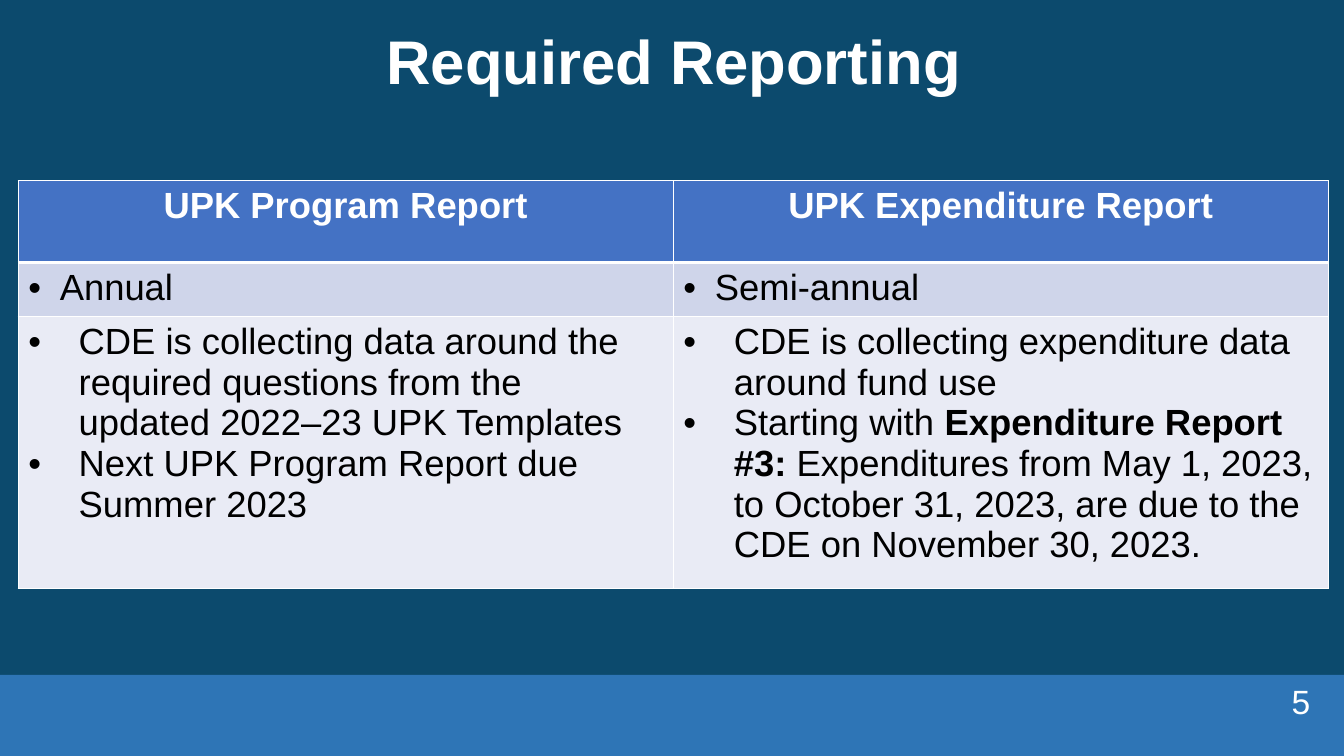
from dataclasses import dataclass

from lxml.etree import SubElement
from pptx import Presentation
from pptx.dml.color import RGBColor as RGB
from pptx.enum.shapes import MSO_SHAPE as Shape
from pptx.enum.text import MSO_ANCHOR as Anchor, PP_ALIGN as Align
from pptx.oxml.ns import qn
from pptx.util import Pt


@dataclass(frozen=True)
class Theme:
    font: str = "Arial"
    background: str = "0C4A6D"
    band: str = "2E75B6"
    light: str = "FFFFFF"
    dark: str = "000000"
    row_fills: tuple = ("4472C4", "CFD5EA", "E9EBF5")
    title_size: int = 44
    table_size: int = 26
    number_size: int = 24


THEME = Theme()
COLUMN_WIDTH = 468
ROW_HEIGHTS = (58.6, 36.2, 181.6)
ROW_INDENTS = (0, 22.5, 36)

# Each cell lists its paragraphs; each paragraph lists (text, bold) runs
REPORTS = (
    (
        [[("UPK Program Report", True)]],
        [[("UPK Expenditure Report", True)]],
    ),
    (
        [[("Annual", False)]],
        [[("Semi-annual", False)]],
    ),
    (
        [
            [("CDE is collecting data around the required questions from the "
              "updated 2022–23 UPK Templates", False)],
            [("Next UPK Program Report due Summer 2023", False)],
        ],
        [
            [("CDE is collecting expenditure data around fund use", False)],
            [("Starting with ", False),
             ("Expenditure Report #3:", True),
             (" Expenditures from May 1, 2023, to October 31, 2023, are due "
              "to the CDE on November 30, 2023.", False)],
        ],
    ),
)


def style_run(run, size, color, bold=False):
    run.font.name = THEME.font
    run.font.size = Pt(size)
    run.font.bold = bold
    run.font.color.rgb = RGB.from_string(color)


def add_band(slide, left, top, width, height):
    band = slide.shapes.add_shape(
        Shape.RECTANGLE, Pt(left), Pt(top), Pt(width), Pt(height))
    band.shadow.inherit = False
    band.fill.solid()
    band.fill.fore_color.rgb = RGB.from_string(THEME.band)
    band.line.fill.background()


def add_label(slide, text, box, size, align, anchor, bold=False, spacing=1.0):
    frame = slide.shapes.add_textbox(*map(Pt, box)).text_frame
    frame.word_wrap = True
    frame.vertical_anchor = anchor
    frame.margin_left = frame.margin_right = 0
    frame.margin_top = frame.margin_bottom = 0
    frame.text = text
    line = frame.paragraphs[0]
    line.alignment = align
    line.line_spacing = spacing
    style_run(line.runs[0], size, THEME.light, bold)


def add_bullet(paragraph, indent):
    properties = paragraph._p.get_or_add_pPr()
    properties.set("marL", str(Pt(indent)))
    properties.set("indent", str(-Pt(indent)))
    SubElement(properties, qn("a:buFont"), typeface=THEME.font)
    SubElement(properties, qn("a:buChar"), char="•")


def set_borders(cell, widths):
    properties = cell._tc.get_or_add_tcPr()
    for side, width in widths.items():
        border = SubElement(properties, qn(f"a:ln{side}"), w=str(Pt(width)))
        fill = SubElement(border, qn("a:solidFill"))
        SubElement(fill, qn("a:srgbClr"), val=THEME.light)


def fill_cell(cell, paragraphs, row):
    is_header = row == 0
    # Borders precede the fill in the cell properties
    set_borders(cell, {"L": 1, "R": 1,
                       "T": 3 if row == 1 else 1,
                       "B": 3 if is_header else 1})
    cell.fill.solid()
    cell.fill.fore_color.rgb = RGB.from_string(THEME.row_fills[row])

    frame = cell.text_frame
    frame.text = "\n".join(
        "".join(text for text, _ in runs) for runs in paragraphs)
    for paragraph, runs in zip(frame.paragraphs, paragraphs):
        paragraph.text = ""
        for text, bold in runs:
            run = paragraph.add_run()
            run.text = text
            style_run(run, THEME.table_size,
                      THEME.light if is_header else THEME.dark, bold)
        if is_header:
            paragraph.alignment = Align.CENTER
        else:
            add_bullet(paragraph, ROW_INDENTS[row])


def add_report_table(slide, left, top):
    columns = len(REPORTS[0])
    table = slide.shapes.add_table(
        len(REPORTS), columns, Pt(left), Pt(top),
        Pt(COLUMN_WIDTH * columns), Pt(sum(ROW_HEIGHTS))).table
    for column in table.columns:
        column.width = Pt(COLUMN_WIDTH)
    for row, (height, cells) in enumerate(zip(ROW_HEIGHTS, REPORTS)):
        table.rows[row].height = Pt(height)
        for column, paragraphs in enumerate(cells):
            fill_cell(table.cell(row, column), paragraphs, row)


def main():
    deck = Presentation()
    deck.slide_width, deck.slide_height = Pt(960), Pt(540)
    slide = deck.slides.add_slide(deck.slide_layouts[6])

    # Background and footer band
    slide.background.fill.solid()
    slide.background.fill.fore_color.rgb = RGB.from_string(THEME.background)
    add_band(slide, 0, 482, 960, 58)

    # Title
    add_label(slide, "Required Reporting", (13.5, -6.5, 936, 104.5),
              THEME.title_size, Align.CENTER, Anchor.MIDDLE,
              bold=True, spacing=0.9)

    # Report comparison
    add_report_table(slide, 13, 129)

    # Slide number
    add_label(slide, "5", (864.5, 494, 71.5, 21.5),
              THEME.number_size, Align.RIGHT, Anchor.BOTTOM)

    deck.save("out.pptx")


if __name__ == "__main__":
    main()
